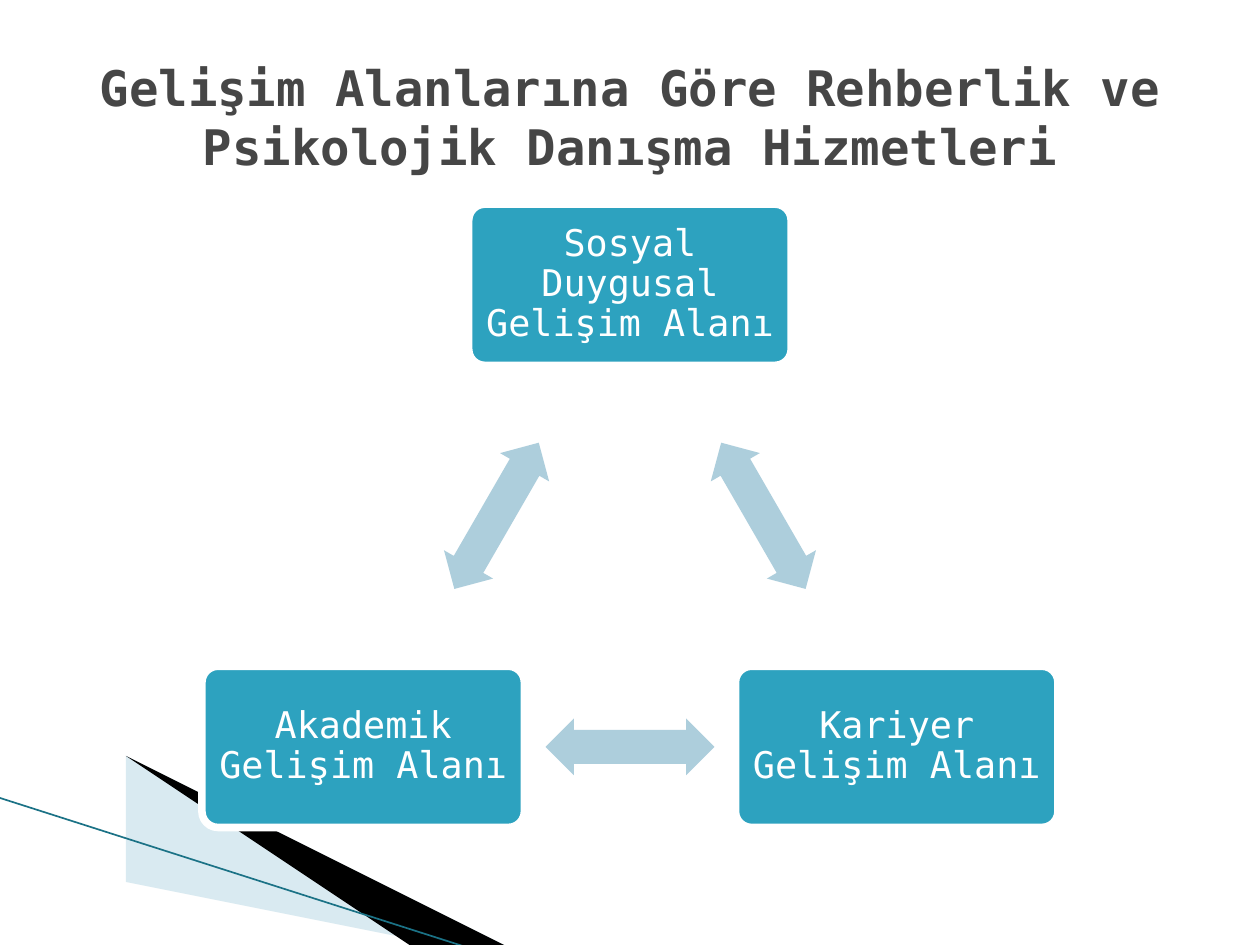
"""Build a slide with three linked areas of development in a cycle."""
from dataclasses import dataclass
from math import cos, radians, sin

from lxml.etree import SubElement
from pptx import Presentation
from pptx.dml.color import RGBColor
from pptx.enum.shapes import MSO_CONNECTOR as Connector, MSO_SHAPE as Shape
from pptx.enum.text import MSO_ANCHOR as Anchor, PP_ALIGN as Align
from pptx.oxml.ns import qn
from pptx.util import Inches, Pt

TITLE = "Gelişim Alanlarına Göre Rehberlik ve Psikolojik Danışma Hizmetleri"
AREAS = ["Sosyal Duygusal Gelişim Alanı", "Kariyer Gelişim Alanı", "Akademik Gelişim Alanı"]


@dataclass(frozen=True)
class Theme:
    font: str = "DejaVu Sans Mono"
    title_size: float = 28
    area_size: float = 21
    title: str = "464646"
    white: str = "FFFFFF"
    area: str = "2DA2BF"
    arrow: str = "ADCEDC"
    edge: str = "1B7286"
    pale: str = "A0CBDC"
    dark: str = "000000"


THEME = Theme()
WIDTH, HEIGHT = 10, 7.5
CENTER_X, CENTER_Y, RADIUS = WIDTH / 2, 4.705, 2.445
AREA_SIZE = (2.56, 1.28)
ARROW_SIZE = (1.34, 0.45)
WEDGES = [
    ([(0.55, 6.51), (5.95, 7.51), (4.56, 7.51), (0.55, 6.5)], THEME.pale, 40),
    ([(0.53, 6.49), (4.57, 7.51), (3.72, 7.52), (0.54, 6.5)], THEME.dark, 100),
]
EDGE = [(-0.01, 6.33), (3.71, 7.52)]


def paint(shape, color):
    shape.shadow.inherit = False
    shape.fill.solid()
    shape.fill.fore_color.rgb = RGBColor.from_string(color)
    shape.line.fill.background()


def write(shape, text, size, color, bold=False):
    frame = shape.text_frame
    frame.text = text
    frame.word_wrap = True
    frame.vertical_anchor = Anchor.MIDDLE
    paragraph = frame.paragraphs[0]
    paragraph.alignment = Align.CENTER
    font = paragraph.runs[0].font
    font.name, font.size, font.bold = THEME.font, Pt(size), bold
    font.color.rgb = RGBColor.from_string(color)
    return frame


def add_centered(slide, kind, x, y, size, color):
    width, height = size
    shape = slide.shapes.add_shape(
        kind, Inches(x - width / 2), Inches(y - height / 2), Inches(width), Inches(height))
    paint(shape, color)
    return shape


def add_decoration(slide):
    for points, color, opacity in WEDGES:
        builder = slide.shapes.build_freeform(*points[0], scale=Inches(1))
        builder.add_line_segments(points[1:], close=True)
        wedge = builder.convert_to_shape()
        paint(wedge, color)
        if opacity < 100:
            fill_color = wedge.fill._xPr.find(qn("a:solidFill"))[0]
            SubElement(fill_color, qn("a:alpha"), val=str(opacity * 1000))
    ends = [Inches(value) for point in EDGE for value in point]
    edge = slide.shapes.add_connector(Connector.STRAIGHT, *ends)
    edge.line.color.rgb = RGBColor.from_string(THEME.edge)
    edge.line.width = Pt(0.95)
    SubElement(edge._element.spPr, qn("a:effectLst"))


def add_area(slide, text, x, y):
    box = add_centered(slide, Shape.ROUNDED_RECTANGLE, x, y, AREA_SIZE, THEME.area)
    box.adjustments[0] = 0.1
    box.line.color.rgb = RGBColor.from_string(THEME.white)
    box.line.width = Pt(4.33)
    frame = write(box, text, THEME.area_size, THEME.white)
    frame.margin_left = frame.margin_right = Inches(0.09)
    frame.margin_top = frame.margin_bottom = Inches(0.09)
    frame.paragraphs[0].line_spacing = 0.9


def add_cycle(slide):
    step = 360 / len(AREAS)
    nodes = [(CENTER_X + RADIUS * sin(radians(index * step)),
              CENTER_Y - RADIUS * cos(radians(index * step))) for index in range(len(AREAS))]
    for index, (text, (x, y)) in enumerate(zip(AREAS, nodes)):
        add_area(slide, text, x, y)
        next_x, next_y = nodes[(index + 1) % len(nodes)]
        arrow = add_centered(slide, Shape.LEFT_RIGHT_ARROW,
                             (x + next_x) / 2, (y + next_y) / 2, ARROW_SIZE, THEME.arrow)
        arrow.adjustments[0], arrow.adjustments[1] = 0.6, 0.5
        arrow.rotation = (index + 0.5) * step


def main():
    presentation = Presentation()
    presentation.slide_width, presentation.slide_height = Inches(WIDTH), Inches(HEIGHT)
    slide = presentation.slides.add_slide(presentation.slide_layouts[6])
    add_decoration(slide)
    add_cycle(slide)
    title = slide.shapes.add_textbox(Inches(0.5), Inches(0.3), Inches(WIDTH - 1), Inches(1.25))
    write(title, TITLE, THEME.title_size, THEME.title, bold=True)
    presentation.save("out.pptx")


if __name__ == "__main__":
    main()
